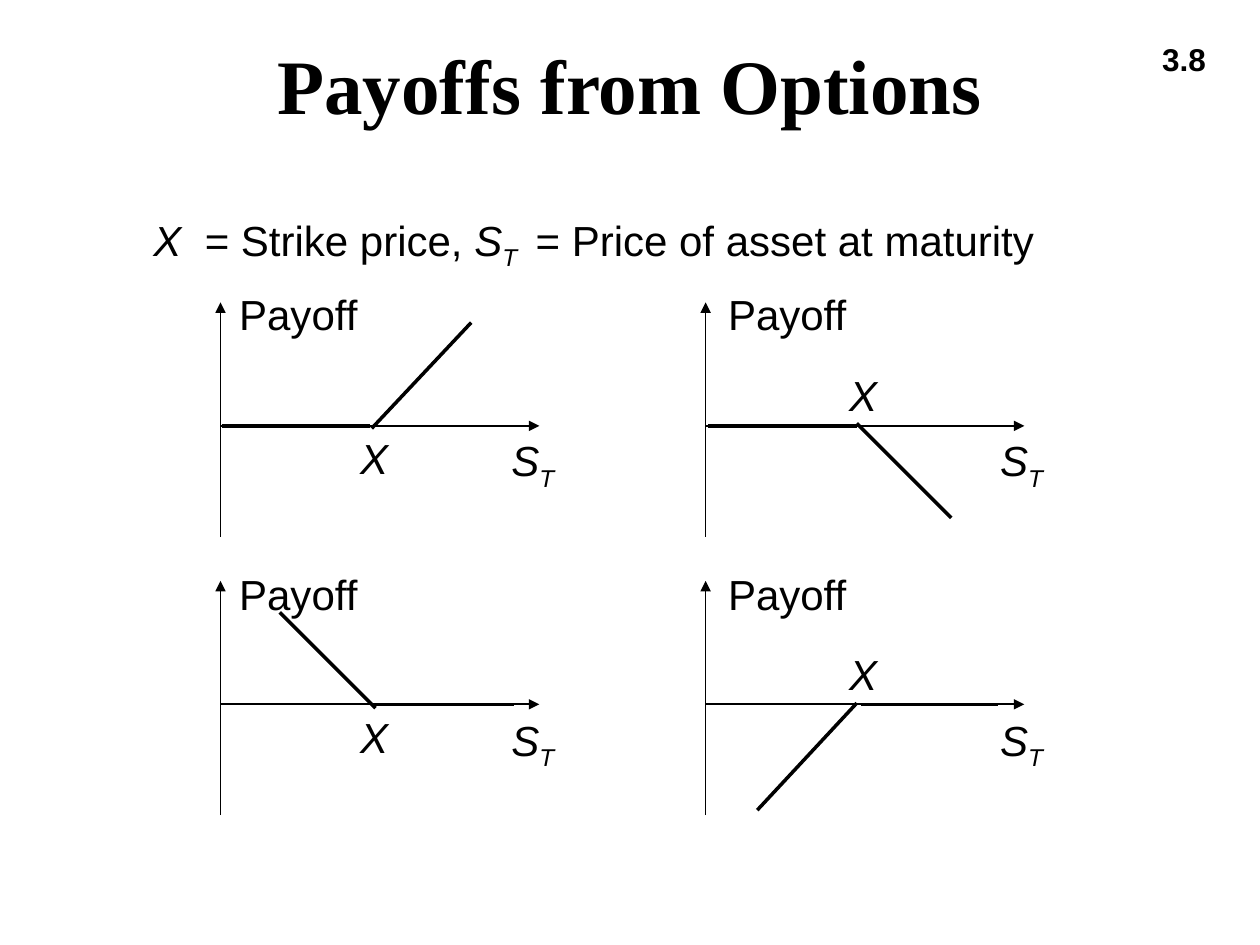
"""Build a slide showing the four option payoff diagrams."""
from pptx import Presentation
from pptx import util as u
from pptx.dml.color import RGBColor
from pptx.enum import shapes, text
from pptx.oxml.ns import qn
from lxml import etree

COLORS = {"ink": "000000"}
TITLE = "Payoffs from Options"
PAGE = "3.8"
LEGEND = [("X", "i"), ("  = Strike price, ", ""), ("S", "i"), ("T ", "is"),
          (" = Price of asset at maturity", "")]
ASSET = [("S", "i"), ("T", "is")]
STRIKE = [("X", "i")]

ORIGIN = (1.75, 3.38)
AXIS_STEP = (3.85, 2.21)
LABEL_STEP = (3.88, 2.22)
AXES = [((0, 0.88), (0, -0.98)), ((0, 0), (2.53, 0))]
PAYOFFS = [
    {"cell": (0, 0), "lines": [((0.01, 0), (1.19, 0)), ((1.2, 0.02), (1.99, -0.82))]},
    {"cell": (1, 0), "lines": [((0.02, 0), (1.2, 0)), ((1.2, -0.02), (1.95, 0.73))]},
    {"cell": (0, 1), "lines": [((0.47, -0.73), (1.23, 0.03)), ((1.22, 0), (2.33, 0))]},
    {"cell": (1, 1), "lines": [((0.41, 0.84), (1.2, -0.01)), ((1.23, 0), (2.32, 0))]},
]


def write(frame, runs, size=24, font="Arial", bold=False, align="LEFT",
          wrap=True, top=0.05, bottom=0.05):
    """Fill a text frame with runs; style i is italic and s is subscript."""
    frame.word_wrap = wrap
    frame.auto_size = text.MSO_AUTO_SIZE.NONE
    frame.margin_left = frame.margin_right = u.Inches(0.1)
    frame.margin_top, frame.margin_bottom = u.Inches(top), u.Inches(bottom)
    paragraph = frame.paragraphs[0]
    paragraph.alignment = getattr(text.PP_ALIGN, align)
    for words, style in runs:
        run = paragraph.add_run()
        run.text = words
        run.font.name, run.font.size = font, u.Pt(size)
        run.font.bold, run.font.italic = bold, "i" in style
        run.font.color.rgb = RGBColor.from_string(COLORS["ink"])
        if "s" in style:
            run.font._element.set("baseline", "-25000")
    return paragraph


def add_text(slide, box, runs, **style):
    """Add a text box with formatted runs."""
    shape = slide.shapes.add_textbox(*map(u.Inches, box))
    return write(shape.text_frame, runs, **style)


def add_line(slide, origin, start, end, width, arrow=False):
    """Draw a line between two points given relative to an origin."""
    points = [u.Inches(origin[i] + point[i]) for point in (start, end) for i in (0, 1)]
    line = slide.shapes.add_connector(shapes.MSO_CONNECTOR.STRAIGHT, *points)
    line.line.width = u.Pt(width)
    line.line.color.rgb = RGBColor.from_string(COLORS["ink"])
    if arrow:
        etree.SubElement(line.line._get_or_add_ln(), qn("a:tailEnd"), type="triangle")
    etree.SubElement(line._element.spPr, qn("a:effectLst"))


def add_diagram(slide, cell, lines):
    """Draw one set of axes with its labels and payoff lines."""
    column, row = cell
    origin = (ORIGIN[0] + column * AXIS_STEP[0], ORIGIN[1] + row * AXIS_STEP[1])
    for start, end in AXES:
        add_line(slide, origin, start, end, 1, arrow=True)
    labels = [
        ([("Payoff", "")], 1.8, 2.24, 1.14),
        (ASSET, 3.96, 3.4, 0.56),
        (STRIKE, 2.76, 2.88 if column else 3.38, 0.42),
    ]
    for runs, left, top, width in labels:
        box = (left + column * LABEL_STEP[0], top + row * LABEL_STEP[1], width, 0.5)
        add_text(slide, box, runs, wrap=False)
    for start, end in lines:
        add_line(slide, origin, start, end, 2)


def main():
    """Create and save the presentation."""
    presentation = Presentation()
    presentation.slide_width, presentation.slide_height = u.Inches(10), u.Inches(7.5)
    slide = presentation.slides.add_slide(presentation.slide_layouts[5])

    title = slide.shapes.title
    title.left, title.top = u.Inches(0.75), u.Inches(0.39)
    title.width, title.height = u.Inches(8.5), u.Inches(1.25)
    title.text_frame.vertical_anchor = text.MSO_ANCHOR.MIDDLE
    write(title.text_frame, [(TITLE, "")], size=44, font="Times New Roman",
          bold=True, align="CENTER", bottom=0.75)

    add_text(slide, (7.5, 0.25, 2.17, 0.5), [(PAGE, "")], size=18, bold=True,
             align="RIGHT", top=0.07)
    legend = add_text(slide, (0.75, 1.5, 8.5, 4.5), LEGEND, top=0.2)
    legend._p.get_or_add_pPr().set("marL", str(u.Inches(0.37)))

    for payoff in PAYOFFS:
        add_diagram(slide, **payoff)
    presentation.save("out.pptx")


if __name__ == "__main__":
    main()
